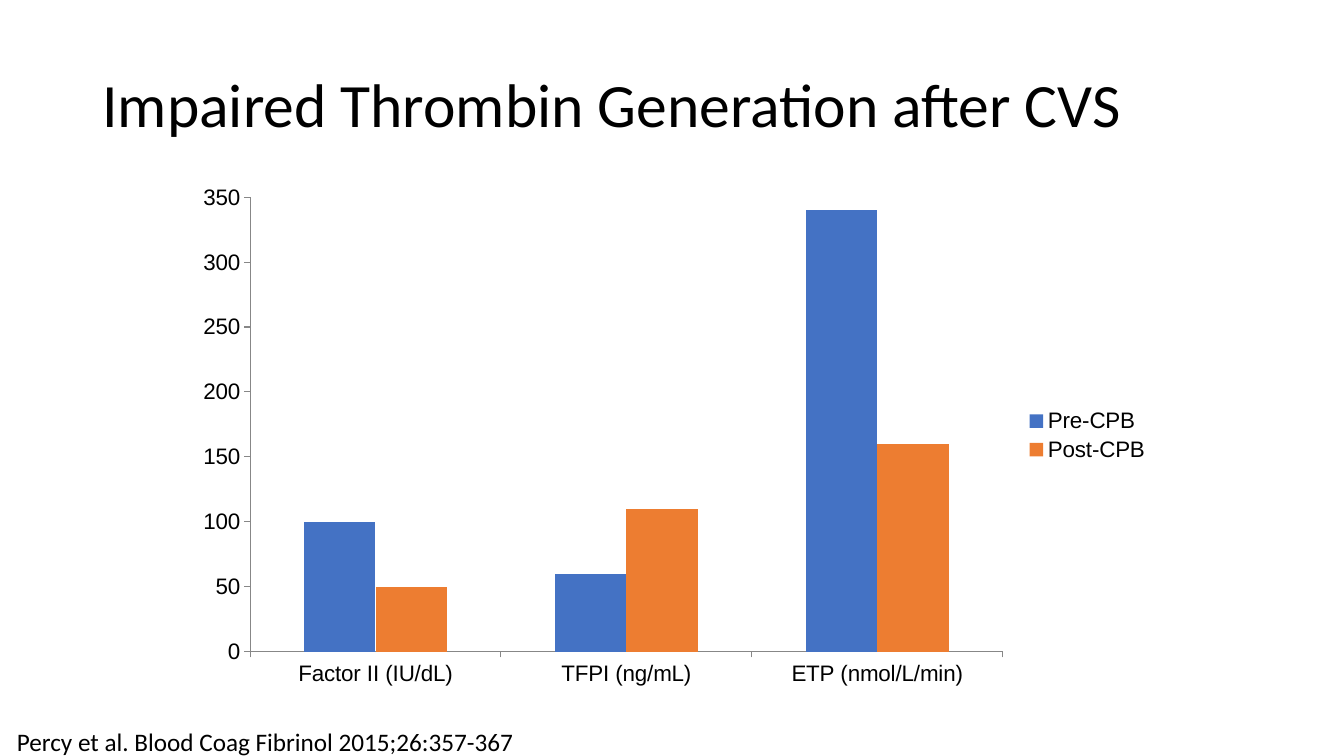
from pptx import Presentation
from pptx.chart.data import CategoryChartData
from pptx.dml.color import RGBColor
from pptx.enum.chart import XL_CHART_TYPE as ChartType
from pptx.enum.chart import XL_LEGEND_POSITION as LegendPosition
from pptx.enum.chart import XL_TICK_MARK as TickMark
from pptx.enum.text import MSO_ANCHOR as Anchor
from pptx.enum.text import MSO_AUTO_SIZE as AutoSize
from pptx.enum.text import PP_ALIGN as Align
from pptx.util import Pt

BLACK = RGBColor(0x00, 0x00, 0x00)
AXIS_GRAY = RGBColor(0x87, 0x87, 0x87)
BLUE = RGBColor(0x44, 0x72, 0xC4)
ORANGE = RGBColor(0xED, 0x7D, 0x31)

CATEGORIES = ["Factor II (IU/dL)", "TFPI (ng/mL)", "ETP (nmol/L/min)"]
SERIES = [
    ("Pre-CPB", [100, 60, 340], BLUE),
    ("Post-CPB", [50, 110, 160], ORANGE),
]


def set_font(font, size, name="Calibri", color=BLACK):
    font.size = Pt(size)
    font.name = name
    font.bold = False
    font.color.rgb = color


def write_text(shape, text, size, anchor=Anchor.TOP, line_spacing=1.0):
    frame = shape.text_frame
    frame.word_wrap = True
    frame.vertical_anchor = anchor
    paragraph = frame.paragraphs[0]
    paragraph.alignment = Align.LEFT
    paragraph.line_spacing = line_spacing
    run = paragraph.add_run()
    run.text = text
    set_font(run.font, size)


def add_title(slide, left, top, width, height):
    title = slide.shapes.title
    title.left, title.top = Pt(left), Pt(top)
    title.width, title.height = Pt(width), Pt(height)
    write_text(title, "Impaired Thrombin Generation after CVS", 44,
               anchor=Anchor.MIDDLE, line_spacing=0.9)


def add_citation(slide, left, top, width, height):
    citation = slide.shapes.add_textbox(Pt(left), Pt(top), Pt(width), Pt(height))
    write_text(citation, "Percy et al. Blood Coag Fibrinol 2015;26:357-367", 18)
    citation.text_frame.auto_size = AutoSize.SHAPE_TO_FIT_TEXT


def add_thrombin_chart(slide, left, top, width, height):
    data = CategoryChartData(number_format="General")
    data.categories = CATEGORIES
    for name, values, _ in SERIES:
        data.add_series(name, values)
    chart = slide.shapes.add_chart(
        ChartType.COLUMN_CLUSTERED,
        Pt(left), Pt(top), Pt(width), Pt(height), data).chart
    chart.has_title = False
    set_font(chart.font, 18)

    # Columns
    plot = chart.plots[0]
    plot.gap_width = 150
    plot.overlap = 0
    plot.vary_by_categories = False
    for series, (_, _, color) in zip(plot.series, SERIES):
        series.format.fill.solid()
        series.format.fill.fore_color.rgb = color

    # Axes
    for axis in (chart.category_axis, chart.value_axis):
        axis.has_major_gridlines = False
        axis.major_tick_mark = TickMark.OUTSIDE
        axis.minor_tick_mark = TickMark.NONE
        axis.format.line.color.rgb = AXIS_GRAY
        axis.format.line.width = Pt(0.75)
        set_font(axis.tick_labels.font, 16, name="Arial")
    chart.value_axis.minimum_scale = 0
    chart.value_axis.maximum_scale = 350
    chart.value_axis.major_unit = 50

    # Legend
    chart.has_legend = True
    chart.legend.position = LegendPosition.RIGHT
    chart.legend.include_in_layout = False
    set_font(chart.legend.font, 16, name="Arial")


def main():
    presentation = Presentation()
    presentation.slide_width, presentation.slide_height = Pt(960), Pt(540)
    slide = presentation.slides.add_slide(presentation.slide_layouts[5])
    add_title(slide, 66, 24.5, 828, 104.4)
    add_citation(slide, 5, 515.5, 430.5, 29)
    add_thrombin_chart(slide, 131.3, 124.8, 697.7, 372.4)
    presentation.save("out.pptx")


if __name__ == "__main__":
    main()
